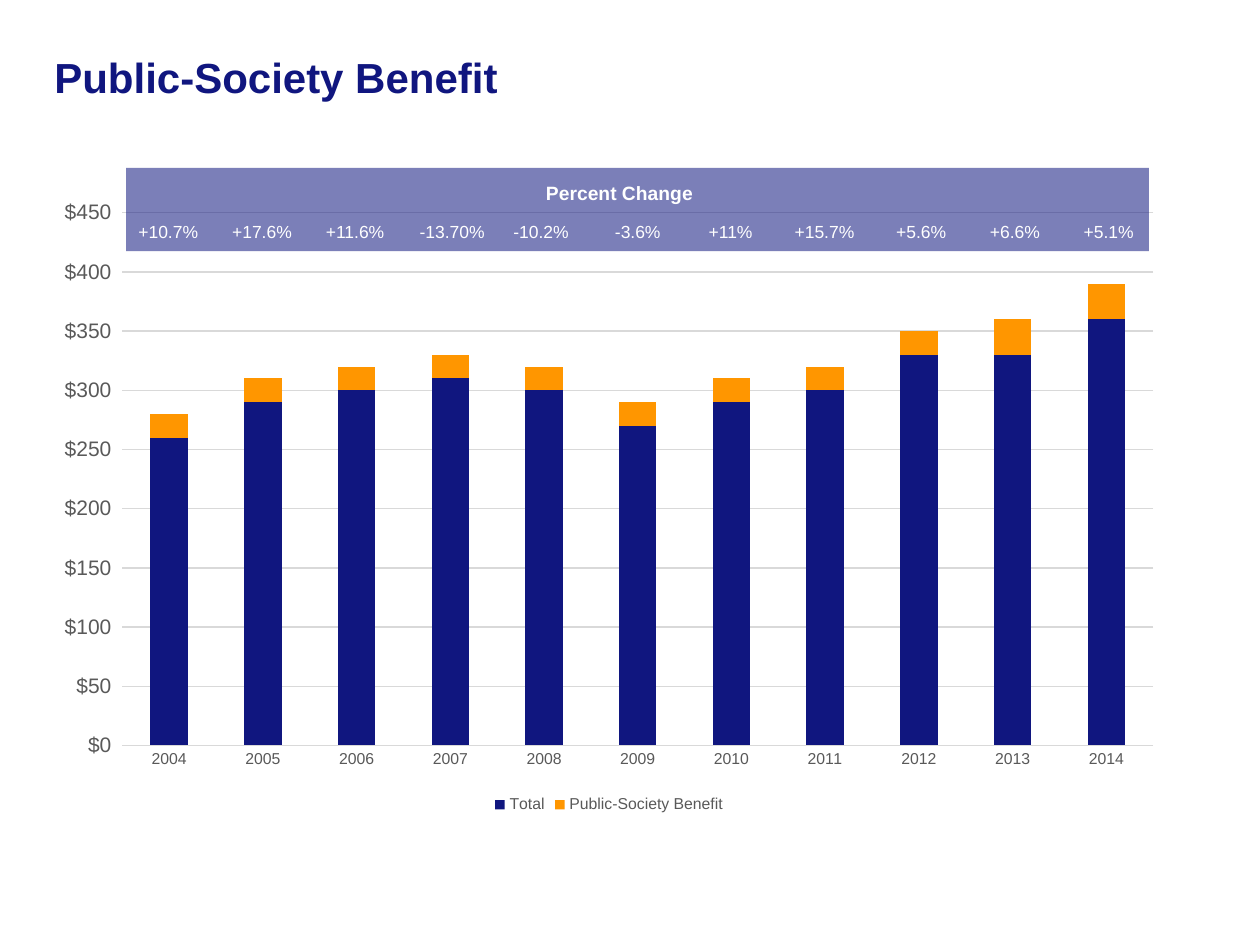
import pptx
import pptx.chart.data
import pptx.dml.color
import pptx.enum.chart
import pptx.enum.text
import pptx.oxml
import pptx.util
from pptx.enum.shapes import MSO_SHAPE

Pt = pptx.util.Pt
COLORS = {"navy": "10167F", "orange": "FF9600", "white": "FFFFFF",
          "label": "595959", "grid": "D9D9D9"}
YEARS = [str(year) for year in range(2004, 2015)]
SERIES = [
    ("Total", "navy", [260, 290, 300, 310, 300, 270, 290, 300, 330, 330, 360]),
    ("Public-Society Benefit", "orange", [20, 20, 20, 20, 20, 20, 20, 20, 20, 30, 30]),
]
CHANGES = ["+10.7%", "+17.6%", "+11.6%", "-13.70%", "-10.2%", "-3.6%",
           "+11%", "+15.7%", "+5.6%", "+6.6%", "+5.1%"]
FIRST_CENTER, PITCH = 99, 53.57


class SlideBuilder:
    """Hold the style and the current page, and add elements to it."""

    def __init__(self, page, font_name="Arial"):
        self.page = page
        self.font_name = font_name

    def color(self, name):
        return pptx.dml.color.RGBColor.from_string(COLORS[name])

    def style(self, font, size, color, bold=False):
        font.name = self.font_name
        font.size = Pt(size)
        font.bold = bold
        font.color.rgb = self.color(color)

    def text(self, wording, left, top, width, height, size, color,
             bold=False, align="LEFT", anchor="TOP", grow=True):
        box = self.page.shapes.add_textbox(Pt(left), Pt(top), Pt(width), Pt(height))
        frame = box.text_frame
        frame.text = wording
        frame.word_wrap = True
        frame.vertical_anchor = pptx.enum.text.MSO_ANCHOR[anchor]
        if grow:
            frame.auto_size = pptx.enum.text.MSO_AUTO_SIZE.SHAPE_TO_FIT_TEXT
        para = frame.paragraphs[0]
        para.alignment = pptx.enum.text.PP_ALIGN[align]
        for span in para.runs:
            self.style(span.font, size, color, bold)

    def band(self, left, top, width, height, color, opacity):
        band = self.page.shapes.add_shape(
            MSO_SHAPE.RECTANGLE, Pt(left), Pt(top), Pt(width), Pt(height))
        band.shadow.inherit = False
        band.line.fill.background()
        band.fill.solid()
        band.fill.fore_color.rgb = self.color(color)
        fill_color = band.fill._xPr.find(".//" + pptx.oxml.ns.qn("a:srgbClr"))
        alpha = pptx.oxml.parse_xml(
            f'<a:alpha {pptx.oxml.ns.nsdecls("a")} val="{opacity * 1000}"/>')
        fill_color.append(alpha)

    def axis(self, axis, size):
        axis.major_tick_mark = pptx.enum.chart.XL_TICK_MARK.NONE
        axis.minor_tick_mark = pptx.enum.chart.XL_TICK_MARK.NONE
        self.style(axis.tick_labels.font, size, "label")

    def grid_line(self, line):
        line.color.rgb = self.color("grid")
        line.width = Pt(0.75)

    def stacked_columns(self, left, top, width, height, categories, series):
        data = pptx.chart.data.CategoryChartData()
        data.categories = categories
        for name, _, values in series:
            data.add_series(name, values)
        chart = self.page.shapes.add_chart(
            pptx.enum.chart.XL_CHART_TYPE.COLUMN_STACKED,
            Pt(left), Pt(top), Pt(width), Pt(height), data).chart
        chart.has_title = False
        self.style(chart.font, 10, "label")

        plot = chart.plots[0]
        plot.gap_width = 150
        plot.overlap = 100
        plot.vary_by_categories = False
        for bars, (_, color, _) in zip(plot.series, series):
            bars.format.fill.solid()
            bars.format.fill.fore_color.rgb = self.color(color)

        self.axis(chart.category_axis, 9)
        self.grid_line(chart.category_axis.format.line)
        values = chart.value_axis
        self.axis(values, 12)
        values.minimum_scale = 0
        values.maximum_scale = 450
        values.major_unit = 50
        values.format.line.fill.background()
        values.has_major_gridlines = True
        self.grid_line(values.major_gridlines.format.line)
        values.tick_labels.number_format = '"$"#,##0_);[Red]\\("$"#,##0\\)'
        values.tick_labels.number_format_is_linked = False

        chart.has_legend = True
        chart.legend.position = pptx.enum.chart.XL_LEGEND_POSITION.BOTTOM
        chart.legend.include_in_layout = False
        self.style(chart.legend.font, 9, "label")


def main():
    deck = pptx.Presentation()
    deck.slide_width, deck.slide_height = Pt(720), Pt(540)
    builder = SlideBuilder(deck.slides.add_slide(deck.slide_layouts[6]))

    builder.text("Public-Society Benefit", 24, 21.6, 648, 44.6, 24, "navy",
                 bold=True, anchor="MIDDLE", grow=False)
    builder.stacked_columns(24, 108, 648, 360, YEARS, SERIES)
    builder.band(72, 96, 584.6, 47.5, "navy", 55)
    builder.text("Percent Change", 281.5, 100, 145, 20.6, 11, "white",
                 bold=True, align="CENTER")
    for index, change in enumerate(CHANGES):
        width = 54 if len(change) > 5 else 45
        left = FIRST_CENTER + index * PITCH - width / 2
        builder.text(change, left, 122.6, width, 19.4, 10, "white")

    deck.save("out.pptx")


if __name__ == "__main__":
    main()
